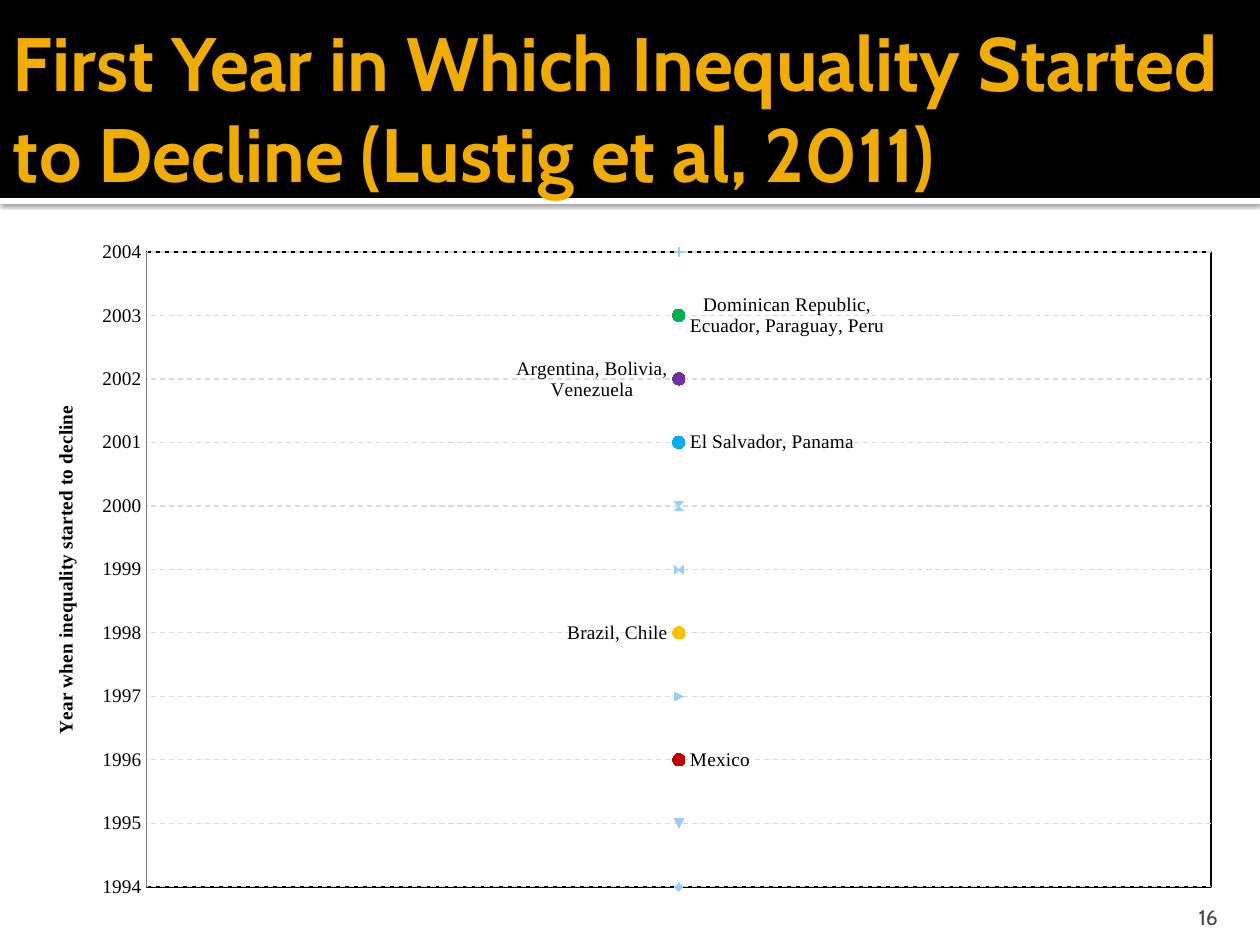
from lxml import etree
from pptx import Presentation
from pptx.chart.data import XyChartData
from pptx.chart.datalabel import DataLabels
from pptx.dml.color import RGBColor
from pptx.enum.chart import (XL_CHART_TYPE, XL_LABEL_POSITION,
                             XL_MARKER_STYLE, XL_TICK_MARK)
from pptx.enum.dml import MSO_LINE
from pptx.enum.shapes import MSO_SHAPE
from pptx.enum.text import MSO_ANCHOR, MSO_AUTO_SIZE, PP_ALIGN
from pptx.oxml import parse_xml
from pptx.oxml.ns import nsdecls, qn
from pptx.util import Pt

PX = 914400 / 126
SCATTER = XL_CHART_TYPE.XY_SCATTER
CIRCLE = XL_MARKER_STYLE.CIRCLE
LEFT, RIGHT = XL_LABEL_POSITION.LEFT, XL_LABEL_POSITION.RIGHT
NO_TICK = XL_TICK_MARK.NONE

BLACK = RGBColor(0x00, 0x00, 0x00)
WHITE = RGBColor(0xFF, 0xFF, 0xFF)
GOLD = RGBColor(0xF0, 0xAD, 0x00)
DARK_GREY = RGBColor(0x45, 0x45, 0x45)
AXIS_GREY = RGBColor(0x80, 0x80, 0x80)
GRID_GREY = RGBColor(0xD9, 0xD9, 0xD9)
PALE_BLUE = RGBColor(0x99, 0xCC, 0xFF)
RED = RGBColor(0xC0, 0x00, 0x00)
AMBER = RGBColor(0xFF, 0xC0, 0x00)
SKY = RGBColor(0x00, 0xB0, 0xF0)
PURPLE = RGBColor(0x70, 0x30, 0xA0)
GREEN = RGBColor(0x00, 0xB0, 0x50)

FIRST_YEAR, LAST_YEAR = 1994, 2004
# Year: countries, marker colour, side of the label
COUNTRIES = {
    1996: ("Mexico", RED, RIGHT),
    1998: ("Brazil, Chile", AMBER, LEFT),
    2001: ("El Salvador, Panama", SKY, RIGHT),
    2002: ("Argentina, Bolivia, Venezuela", PURPLE, LEFT),
    2003: ("Dominican Republic, Ecuador, Paraguay, Peru", GREEN, RIGHT),
}


def emu(*lengths):
    return [round(length * PX) for length in lengths]


def write_text(frame, text, size, color, font="Cabin", bold=False,
               align=PP_ALIGN.LEFT, anchor=MSO_ANCHOR.MIDDLE,
               insets=(13, 6, 6, 6)):
    frame.word_wrap = True
    frame.auto_size = MSO_AUTO_SIZE.NONE
    frame.vertical_anchor = anchor
    (frame.margin_left, frame.margin_top,
     frame.margin_right, frame.margin_bottom) = emu(*insets)
    para = frame.paragraphs[0]
    para.alignment = align
    span = para.add_run()
    span.text = text
    span.font.size, span.font.bold, span.font.name = Pt(size), bold, font
    span.font.color.rgb = color


def add_band(page, box, color):
    band = page.shapes.add_shape(MSO_SHAPE.RECTANGLE, *emu(*box))
    band.shadow.inherit = False
    band.fill.solid()
    band.fill.fore_color.rgb = color
    band.line.fill.background()
    return band


def add_header(page, box, text):
    left, top, width, height = box
    # White rule with a soft shadow under the black band
    rule = add_band(page, (left, top + height, width, 6), WHITE)
    effects = rule._element.spPr.find(qn("a:effectLst"))
    effects.append(parse_xml(
        f'<a:outerShdw {nsdecls("a")} blurRad="31750" dist="10160" '
        'dir="5400000" rotWithShape="0"><a:srgbClr val="000000">'
        '<a:alpha val="60000"/></a:srgbClr></a:outerShdw>'))
    add_band(page, box, BLACK)

    # Title, brought in front of the bands
    title = page.shapes.title
    page.shapes._spTree.append(title._element)
    title.left, title.top, title.width, title.height = emu(
        left, top, width, height + 16)
    write_text(title.text_frame, text, 43.2, GOLD, bold=True)


def add_page_number(page, box, text):
    number = page.shapes.add_textbox(*emu(*box))
    write_text(number.text_frame, text, 12, DARK_GREY, align=PP_ALIGN.RIGHT,
               anchor=MSO_ANCHOR.BOTTOM, insets=(13, 6, 13, 0))


def set_layout(element, index, **parts):
    """Place a chart part by fractions of the chart's size."""
    old = element.find(qn("c:layout"))
    if old is not None:
        element.remove(old)
    layout = parse_xml(f'<c:layout {nsdecls("c")}><c:manualLayout/></c:layout>')
    for name, value in parts.items():
        etree.SubElement(layout[0], qn(f"c:{name}")).set("val", str(value))
    element.insert(index, layout)


def shape_format(fill, line):
    return parse_xml(
        f'<c:spPr {nsdecls("c", "a")}>{fill}<a:ln w="9525"><a:solidFill>'
        f'<a:srgbClr val="{line}"/></a:solidFill></a:ln></c:spPr>')


def format_axes(chart):
    across, years = chart.category_axis, chart.value_axis
    across.minimum_scale, across.maximum_scale, across.major_unit = 0, 2, 1
    across.has_major_gridlines = False
    across.visible = False

    years.minimum_scale, years.maximum_scale = FIRST_YEAR, LAST_YEAR
    years.major_unit = 1
    years.major_tick_mark = years.minor_tick_mark = NO_TICK
    years.format.line.color.rgb = AXIS_GREY
    years.has_major_gridlines = True
    grid = years.major_gridlines.format.line
    grid.color.rgb, grid.width, grid.dash_style = GRID_GREY, Pt(0.75), MSO_LINE.DASH

    years.has_title = True
    span = years.axis_title.text_frame.paragraphs[0].add_run()
    span.text = "Year when inequality started to decline"
    span.font.size, span.font.bold = Pt(11), True
    span.font.name = "Times New Roman"
    span.font.color.rgb = BLACK
    set_layout(years.axis_title._element, 1,
               xMode="edge", yMode="edge", x=0.02, y=0.26)


def format_series(series, year):
    series.format.line.fill.background()
    color = PALE_BLUE
    marker = series.marker
    if year in COUNTRIES:
        _, color, side = COUNTRIES[year]
        marker.style, marker.size = CIRCLE, 7
        labels = DataLabels(series._element.get_or_add_dLbls())
        labels.show_value, labels.show_series_name = False, True
        labels.position = side
    else:
        marker.size = 5
    marker.format.fill.solid()
    marker.format.fill.fore_color.rgb = color
    marker.format.line.color.rgb = color


def add_year_chart(page, box):
    years = range(FIRST_YEAR, LAST_YEAR + 1)
    data = XyChartData()
    for order, year in enumerate(years, 1):
        name = COUNTRIES[year][0] if year in COUNTRIES else f"Series {order}"
        data.add_series(name).add_data_point(1, year)
    chart = page.shapes.add_chart(SCATTER, *emu(*box), data).chart
    chart.has_legend = chart.has_title = False
    chart.font.size, chart.font.name = Pt(11), "Times New Roman"
    chart.font.color.rgb = BLACK
    format_axes(chart)
    for year, series in zip(years, chart.plots[0].series):
        format_series(series, year)

    # Plot frame and chart background
    space = chart._chartSpace
    area = space.chart.plotArea
    set_layout(area, 0, layoutTarget="inner", xMode="edge", yMode="edge",
               x=0.1, y=0.04, w=0.88, h=0.93)
    area.append(shape_format("<a:noFill/>", BLACK))
    white = f'<a:solidFill><a:srgbClr val="{WHITE}"/></a:solidFill>'
    space.find(qn("c:txPr")).addprevious(shape_format(white, WHITE))


def main():
    deck = Presentation()
    deck.slide_width, deck.slide_height = emu(1260, 945)
    page = deck.slides.add_slide(deck.slide_layouts[5])
    add_header(page, (0, 0, 1260, 198),
               "First Year in Which Inequality Started to Decline "
               "(Lustig et al, 2011)")
    add_page_number(page, (1130, 892, 101, 38), "16")
    add_year_chart(page, (25, 224, 1211, 684))
    deck.save("out.pptx")


if __name__ == "__main__":
    main()
